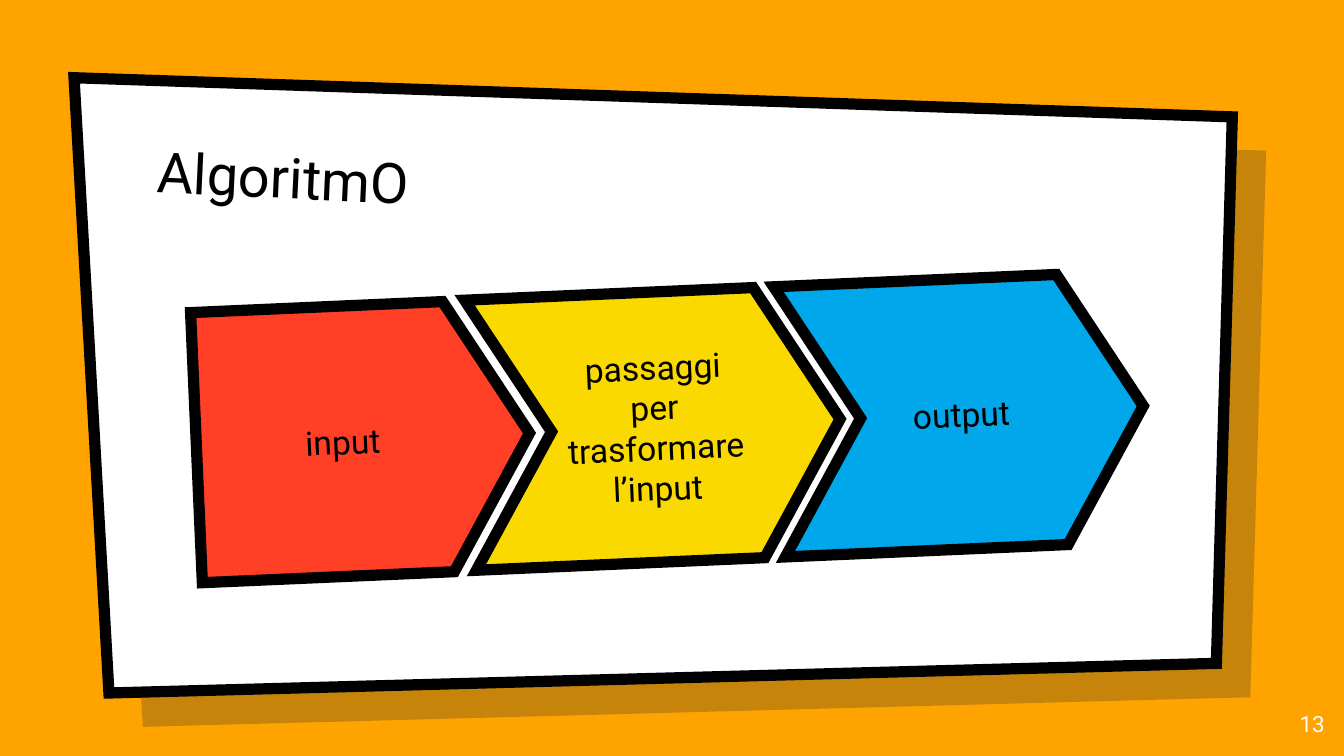
from dataclasses import dataclass

from lxml import etree
from pptx import Presentation
from pptx import util as u
from pptx.dml.color import RGBColor
from pptx.enum import shapes, text
from pptx.oxml import ns


@dataclass(frozen=True)
class Theme:
    font: str = "Roboto"
    backdrop: str = "FFA300"
    shade: str = "001936"
    shade_opacity: int = 22
    paper: str = "FFFFFF"
    ink: str = "000000"
    red: str = "FF4026"
    yellow: str = "FAD900"
    blue: str = "00A7EB"
    title_size: int = 30
    label_size: int = 18
    number_size: int = 12
    outline: int = 6


@dataclass(frozen=True)
class Box:
    left: float
    top: float
    width: float
    height: float

    def inner(self, left, top, width, height):
        return Box(self.left + left, self.top + top, width, height)

    def lengths(self):
        return [u.Cm(n) for n in (self.left, self.top, self.width, self.height)]


THEME = Theme()
PANEL_CORNERS = [(0, 0), (1, 0.06), (0.99, 0.95), (0.03, 1)]
PANEL_CORNERS = [(0, 0), (21.89, 0.74), (21.59, 11.07), (0.66, 11.63)]
STEP_HEIGHT = 5.11
STEP_RISE = 0.25
STEP_TILT = 357.5
STEP_POINT = 0.3


def write(shape, content, size, color=THEME.ink, align=text.PP_ALIGN.LEFT,
          anchor=text.MSO_ANCHOR.TOP):
    frame = shape.text_frame
    frame.auto_size = text.MSO_AUTO_SIZE.NONE
    frame.word_wrap = True
    frame.vertical_anchor = anchor
    frame.margin_left = frame.margin_right = u.Cm(0.25)
    frame.margin_top = frame.margin_bottom = u.Cm(0.25)
    para = frame.paragraphs[0]
    para.alignment = align
    span = para.add_run()
    span.text = content
    span.font.name = THEME.font
    span.font.size = u.Pt(size)
    span.font.color.rgb = RGBColor.from_string(color)


def paint(shape, color, opacity=None, outlined=True):
    shape.shadow.inherit = False
    shape.fill.solid()
    shape.fill.fore_color.rgb = RGBColor.from_string(color)
    if opacity is not None:
        tint = shape.fill._xPr.find(".//" + ns.qn("a:srgbClr"))
        etree.SubElement(tint, ns.qn("a:alpha"), val=str(opacity * 1000))
    if not outlined:
        shape.line.fill.background()
        return
    shape.line.color.rgb = RGBColor.from_string(THEME.ink)
    shape.line.width = u.Pt(THEME.outline)
    outline = shape.line._get_or_add_ln()
    etree.SubElement(outline, ns.qn("a:miter"), lim="800000")


def add_sheet(page, box):
    corners = [(u.Cm(box.left + x), u.Cm(box.top + y)) for x, y in PANEL_CORNERS]
    builder = page.shapes.build_freeform(*corners[0])
    builder.add_line_segments(corners[1:], close=True)
    return builder.convert_to_shape()


def add_panel(page, box):
    shade = add_sheet(page, box.inner(0.64, 0.64, box.width, box.height))
    paint(shade, THEME.shade, opacity=THEME.shade_opacity, outlined=False)
    paint(add_sheet(page, box), THEME.paper)


def add_title(page, box):
    title = page.shapes.title
    title.left, title.top, title.width, title.height = box.lengths()
    title.rotation = 2.7
    write(title, "AlgoritmO", THEME.title_size, anchor=text.MSO_ANCHOR.BOTTOM)


def add_steps(page, box):
    kinds = shapes.MSO_SHAPE
    steps = [
        ("input", kinds.PENTAGON, THEME.red, 0, 6.3),
        ("passaggi per trasformare l’input", kinds.CHEVRON, THEME.yellow, 5.18, 6.99),
        ("output", kinds.CHEVRON, THEME.blue, 11.02, 6.88),
    ]
    for index, (label, kind, color, left, width) in enumerate(steps):
        place = box.inner(left, -index * STEP_RISE, width, STEP_HEIGHT)
        step = page.shapes.add_shape(kind, *place.lengths())
        step.adjustments[0] = STEP_POINT
        step.rotation = STEP_TILT
        paint(step, color)
        write(step, label, THEME.label_size, align=text.PP_ALIGN.CENTER,
              anchor=text.MSO_ANCHOR.MIDDLE)


def add_page_number(page, box):
    number = page.shapes.add_textbox(*box.lengths())
    write(number, "13", THEME.number_size, color=THEME.paper,
          align=text.PP_ALIGN.RIGHT)


def main():
    deck = Presentation()
    deck.slide_width, deck.slide_height = u.Cm(25.4), u.Cm(14.29)
    page = deck.slides.add_slide(deck.slide_layouts.get_by_name("Title Only"))
    page.background.fill.solid()
    page.background.fill.fore_color.rgb = RGBColor.from_string(THEME.backdrop)

    panel = Box(1.4, 1.47, 21.89, 11.63)
    add_panel(page, panel)
    title = page.shapes.title
    page.shapes._spTree.append(title._element)
    add_title(page, panel.inner(1.32, 0.97, 19.53, 2.11))
    add_steps(page, panel.inner(2.31, 4.3, 17.9, STEP_HEIGHT))
    add_page_number(page, Box(23.77, 13.18, 1.52, 1.09))
    deck.save("out.pptx")


if __name__ == "__main__":
    main()
